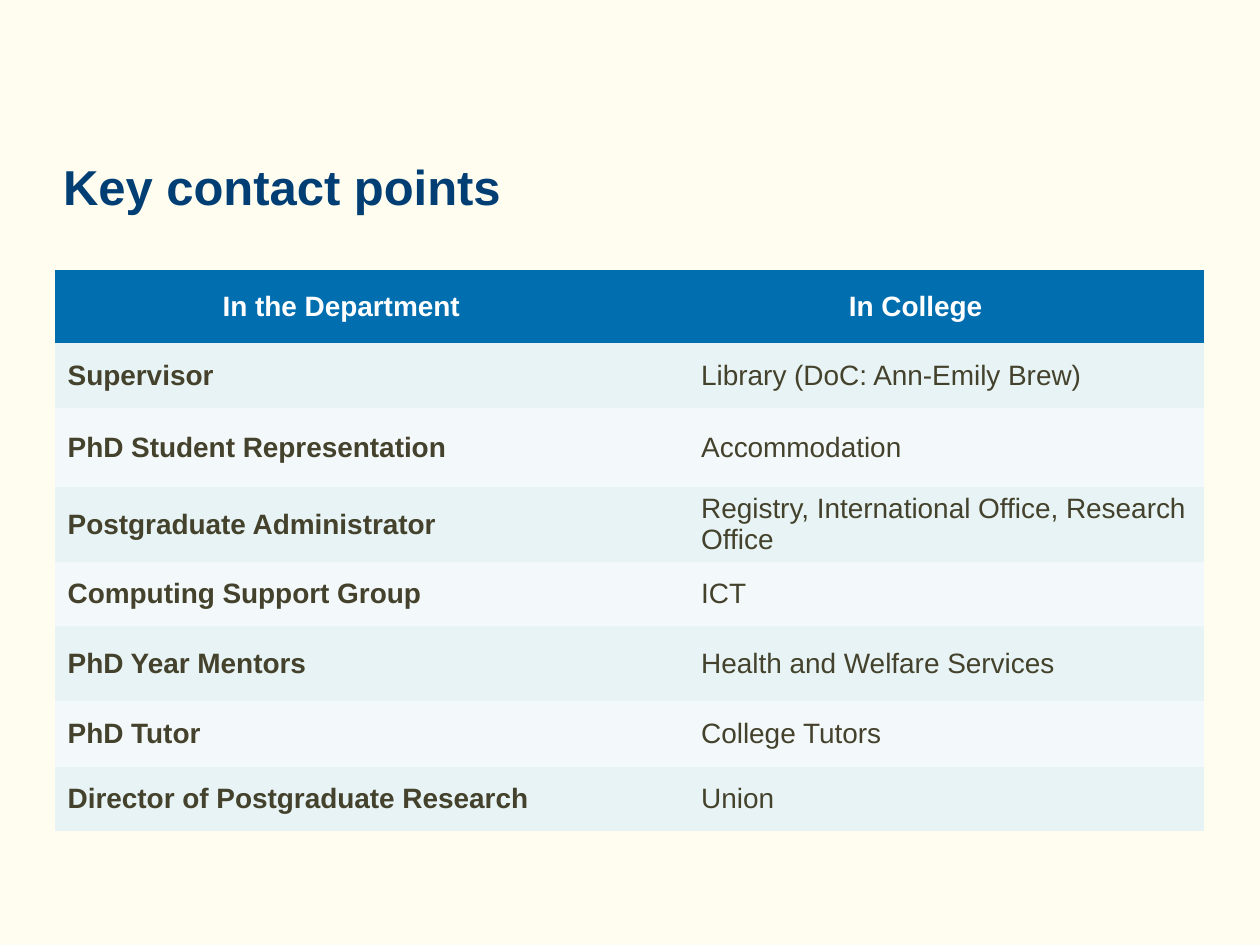
from dataclasses import dataclass

from pptx import Presentation
from pptx.dml.color import RGBColor
from pptx.enum.text import MSO_ANCHOR, MSO_AUTO_SIZE, PP_ALIGN
from pptx.oxml.ns import qn
from pptx.util import Pt


@dataclass(frozen=True)
class Theme:
    font: str = "Arial"
    background: str = "FFFDF0"
    title: str = "003E74"
    header_fill: str = "006EAF"
    header_text: str = "FFFFFF"
    body_text: str = "44422C"
    bands: tuple = ("E7F3F4", "F3F9FA")
    title_size: int = 28
    table_size: int = 16


theme = Theme()
NO_STYLE_NO_GRID = "{2D5ABB26-0587-4C30-8999-92F81FD0307C}"
COLLEGE_INDENT = 35

headings = ("In the Department", "In College")
contacts = [
    ("Supervisor", "Library (DoC: Ann-Emily Brew)"),
    ("PhD Student Representation", "Accommodation"),
    ("Postgraduate Administrator", "Registry, International Office, Research Office"),
    ("Computing Support Group", "ICT"),
    ("PhD Year Mentors", "Health and Welfare Services"),
    ("PhD Tutor", "College Tutors"),
    ("Director of Postgraduate Research", "Union"),
]
column_widths = (327, 329.5)
row_heights = (41.75, 37, 45.25, 42.75, 36.75, 42.75, 37.5, 36.75)


def add_span(para, text, size, color, bold):
    span = para.add_run()
    span.text = text
    span.font.name = theme.font
    span.font.size = Pt(size)
    span.font.bold = bold
    span.font.color.rgb = RGBColor.from_string(color)


deck = Presentation()
deck.slide_width, deck.slide_height = Pt(720), Pt(540)
page = deck.slides.add_slide(deck.slide_layouts[5])
page.background.fill.solid()
page.background.fill.fore_color.rgb = RGBColor.from_string(theme.background)

# Title
title = page.shapes.title
title.left, title.top, title.width, title.height = Pt(36), Pt(84.25), Pt(648), Pt(40.25)
box = title.text_frame
box.word_wrap = True
box.auto_size = MSO_AUTO_SIZE.NONE
box.vertical_anchor = MSO_ANCHOR.MIDDLE
box.margin_left = box.margin_right = box.margin_bottom = 0
box.margin_top = Pt(3.6)
box.paragraphs[0].alignment = PP_ALIGN.LEFT
add_span(box.paragraphs[0], "Key contact points", theme.title_size, theme.title, True)

# Contact table
rows = [headings, *contacts]
frame = page.shapes.add_table(
    len(rows), len(headings), Pt(31.5), Pt(154.5),
    Pt(sum(column_widths)), Pt(sum(row_heights)),
)
table = frame.table
table.horz_banding = False
frame._element.find(".//" + qn("a:tableStyleId")).text = NO_STYLE_NO_GRID
for column, width in zip(table.columns, column_widths):
    column.width = Pt(width)
for row, height in zip(table.rows, row_heights):
    row.height = Pt(height)

for row_index, texts in enumerate(rows):
    is_header = row_index == 0
    fill = theme.header_fill if is_header else theme.bands[(row_index - 1) % 2]
    color = theme.header_text if is_header else theme.body_text
    for column_index, text in enumerate(texts):
        cell = table.cell(row_index, column_index)
        cell.fill.solid()
        cell.fill.fore_color.rgb = RGBColor.from_string(fill)
        cell.vertical_anchor = MSO_ANCHOR.MIDDLE
        para = cell.text_frame.paragraphs[0]
        para.alignment = PP_ALIGN.CENTER if is_header else PP_ALIGN.LEFT
        in_college = column_index == 1
        if in_college and not is_header:
            para._p.get_or_add_pPr().set("marL", str(Pt(COLLEGE_INDENT)))
        add_span(para, text, theme.table_size, color, is_header or not in_college)

deck.save("out.pptx")
